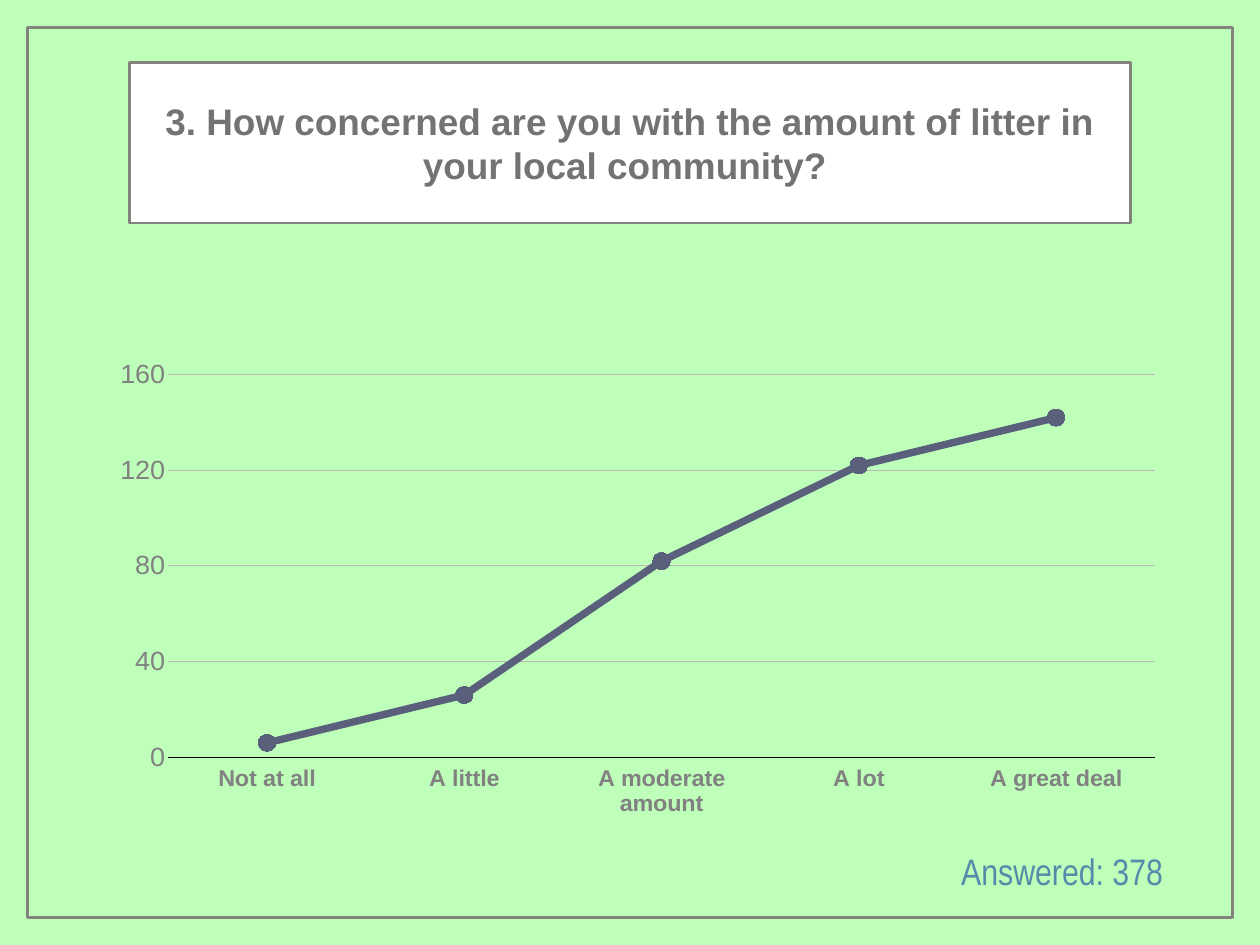
from dataclasses import dataclass

from lxml import etree
from pptx import Presentation
from pptx.chart.data import CategoryChartData
from pptx.dml.color import RGBColor
from pptx.enum.chart import XL_CHART_TYPE as ChartType
from pptx.enum.chart import XL_MARKER_STYLE as MarkerStyle
from pptx.enum.chart import XL_TICK_LABEL_POSITION as LabelPosition
from pptx.enum.chart import XL_TICK_MARK as TickMark
from pptx.enum.shapes import MSO_SHAPE as ShapeType
from pptx.enum.text import MSO_ANCHOR as Anchor
from pptx.enum.text import MSO_AUTO_SIZE as AutoSize
from pptx.enum.text import PP_ALIGN as Align
from pptx.oxml.ns import qn
from pptx.util import Cm, Pt


@dataclass(frozen=True)
class Theme:
    background: str = "BEFFBA"
    panel: str = "FFFFFF"
    border: str = "83827D"
    title: str = "737373"
    accent: str = "558AAB"
    label: str = "818181"
    axis: str = "000000"
    grid: str = "B8B8B8"
    series: str = "5A5F7B"
    font: str = "Arial"
    narrow_font: str = "Arial Narrow"
    heading_size: int = 30
    value_size: int = 22
    category_size: int = 19
    chart_size: int = 10


THEME = Theme()
ANSWERS = {
    "Not at all": 6,
    "A little": 26,
    "A moderate amount": 82,
    "A lot": 122,
    "A great deal": 142,
}


def set_values(target, values):
    for name, value in values.items():
        setattr(target, name, value)


def style_font(font, size, color, name=THEME.font, bold=False):
    set_values(font, {"size": Pt(size), "name": name, "bold": bold})
    font.color.rgb = RGBColor.from_string(color)


def style_line(line, color, width):
    line.color.rgb = RGBColor.from_string(color)
    line.width = Pt(width)


def style_fill(fill, color):
    fill.solid()
    fill.fore_color.rgb = RGBColor.from_string(color)


def add_panel(slide, box, fill=None):
    shape = slide.shapes.add_shape(ShapeType.RECTANGLE, *map(Cm, box))
    shape.shadow.inherit = False
    style_line(shape.line, THEME.border, 2)
    if fill:
        style_fill(shape.fill, fill)
    else:
        shape.fill.background()
    return shape


def write_text(shape, text, color, **font_values):
    frame = shape.text_frame
    margins = dict.fromkeys(
        ("margin_left", "margin_top", "margin_right", "margin_bottom"), Cm(0.15))
    set_values(frame, {**margins, "word_wrap": True, "vertical_anchor": Anchor.MIDDLE})
    paragraph = frame.paragraphs[0]
    paragraph.alignment = Align.CENTER
    run = paragraph.add_run()
    run.text = text
    style_font(run.font, THEME.heading_size, color, **font_values)


def add_question(slide, box):
    panel = add_panel(slide, box, THEME.panel)
    question = "3. How concerned are you with the amount of litter in your local community? "
    write_text(panel, question, THEME.title, bold=True)


def add_answer_count(slide, box):
    text_box = slide.shapes.add_textbox(*map(Cm, box))
    write_text(text_box, f"Answered: {sum(ANSWERS.values())}", THEME.accent,
               name=THEME.narrow_font)
    text_box.text_frame.auto_size = AutoSize.SHAPE_TO_FIT_TEXT


def set_plot_layout(chart, **fractions):
    """Fix the inner plot area as fractions of the chart."""
    plot_area = chart.plots[0]._element.getparent()
    layout = plot_area.find(qn("c:layout"))
    if layout is None:
        layout = etree.Element(qn("c:layout"))
        plot_area.insert(0, layout)
    manual = etree.SubElement(layout, qn("c:manualLayout"))
    settings = {"layoutTarget": "inner", "xMode": "edge", "yMode": "edge", **fractions}
    for name, value in settings.items():
        etree.SubElement(manual, qn(f"c:{name}")).set("val", str(value))


def add_answer_chart(slide, box):
    data = CategoryChartData()
    data.categories = list(ANSWERS)
    data.add_series("Series 1", list(ANSWERS.values()))
    chart = slide.shapes.add_chart(ChartType.LINE_MARKERS, *map(Cm, box), data).chart
    set_values(chart, {"has_legend": False, "has_title": False})
    style_font(chart.font, THEME.chart_size, THEME.accent)
    set_plot_layout(chart, x=0.06, y=0.06, w=0.88, h=0.84)

    # Axes
    no_ticks = {"major_tick_mark": TickMark.NONE, "minor_tick_mark": TickMark.NONE}
    category_axis, value_axis = chart.category_axis, chart.value_axis
    set_values(category_axis, {**no_ticks, "has_major_gridlines": False,
                               "tick_label_position": LabelPosition.LOW})
    style_font(category_axis.tick_labels.font, THEME.category_size, THEME.label, bold=True)
    style_line(category_axis.format.line, THEME.axis, 1)
    set_values(value_axis, {**no_ticks, "has_major_gridlines": True, "major_unit": 40,
                            "minimum_scale": 0, "maximum_scale": 160})
    style_font(value_axis.tick_labels.font, THEME.value_size, THEME.label)
    value_axis.format.line.fill.background()
    style_line(value_axis.major_gridlines.format.line, THEME.grid, 1)

    # Line and markers
    plot = chart.plots[0]
    plot.vary_by_categories = False
    series = plot.series[0]
    series.smooth = False
    style_line(series.format.line, THEME.series, 6)
    set_values(series.marker, {"style": MarkerStyle.CIRCLE, "size": 14})
    style_fill(series.marker.format.fill, THEME.series)
    series.marker.format.line.fill.background()


def build_survey_slide(presentation, box):
    slide = presentation.slides.add_slide(presentation.slide_layouts[6])
    style_fill(slide.background.fill, THEME.background)
    left, top, width, height = box
    add_panel(slide, box)
    add_question(slide, (left + 2.92, top + 1.01, width - 5.84, 4.6))
    add_answer_chart(slide, (left + 2.11, top + 9.17, width - 2.41, 13.44))
    add_answer_count(slide, (left + width - 9.35, top + height - 2.11, 8.94, 1.55))


def main():
    presentation = Presentation()
    width, height, margin = 36.12, 27.1, 0.79
    set_values(presentation, {"slide_width": Cm(width), "slide_height": Cm(height)})
    build_survey_slide(
        presentation, (margin, margin, width - 2 * margin, height - 2 * margin))
    presentation.save("out.pptx")


if __name__ == "__main__":
    main()
